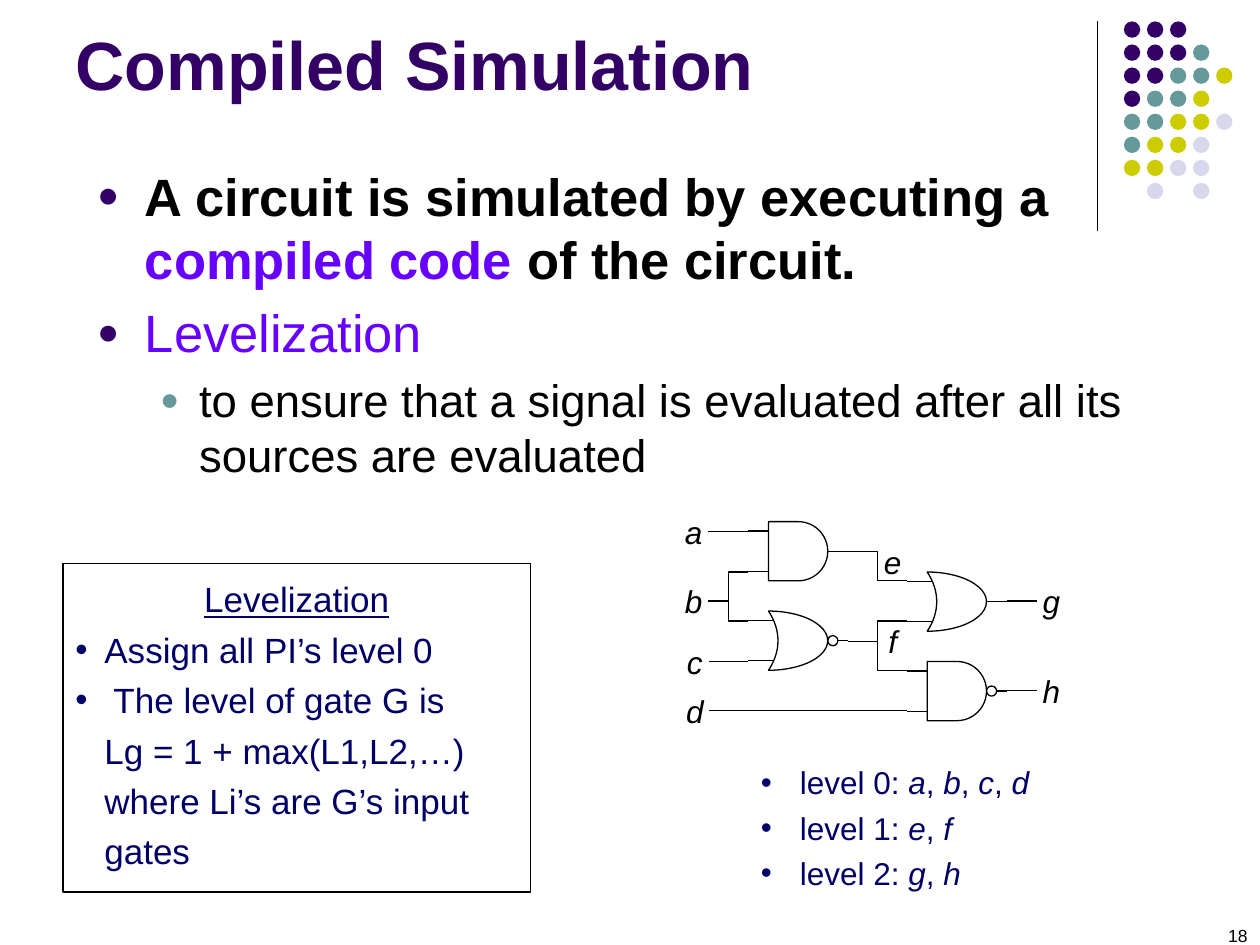
"""Build the Compiled Simulation slide with its gate circuit and levelization rules."""
from dataclasses import dataclass

import pptx
import pptx.dml.color
import pptx.enum.shapes
import pptx.enum.text
import pptx.oxml.ns
import pptx.util
from lxml import etree

Inches = pptx.util.Inches
Pt = pptx.util.Pt
Shape = pptx.enum.shapes.MSO_SHAPE
Connector = pptx.enum.shapes.MSO_CONNECTOR
Align = pptx.enum.text.PP_ALIGN
Anchor = pptx.enum.text.MSO_ANCHOR

BLACK, WHITE, PURPLE, VIOLET = "000000", "FFFFFF", "330066", "6600FF"
TEAL, NAVY = "669999", "000066"
DOT_COLORS = {"P": PURPLE, "T": TEAL, "Y": "CCCC00", "L": "D8D8EC"}
DOT_ROWS = ["PPP", "PPPT", "PPTTY", "PTTY", "TTYYL", "TYYL", "YYLL", "-L-L"]
DOT_PITCH = 0.183
GATE_SIZE = 0.47
LINE_SPACING = 1.2


@dataclass(frozen=True)
class Gate:
    left: float
    top: float
    outline: Shape
    inverted: bool = False


@dataclass(frozen=True)
class Label:
    name: str
    left: float
    top: float


@dataclass(frozen=True)
class Wire:
    begin: tuple[float, float]
    end: tuple[float, float]
    source: str = ""
    target: str = ""


GATES = [
    Gate(7.36, 4.54, Shape.MOON),
    Gate(6.1, 4.14, Shape.FLOWCHART_DELAY),
    Gate(7.36, 5.25, Shape.FLOWCHART_DELAY, inverted=True),
    Gate(6.1, 4.85, Shape.MOON, inverted=True),
]
LABELS = [
    Label("a", 5.39, 4.06), Label("b", 5.39, 4.61), Label("c", 5.4, 5.09), Label("d", 5.4, 5.48),
    Label("e", 6.97, 4.3), Label("f", 6.97, 4.93), Label("g", 8.23, 4.61), Label("h", 8.23, 5.32),
]
WIRES = [
    Wire((5.63, 4.22), (5.94, 4.22), source="a"),
    Wire((5.63, 4.77), (5.94, 4.93), source="b"),
    Wire((5.63, 4.77), (5.94, 4.54), source="b"),
    Wire((5.63, 5.25), (5.94, 5.25), source="c"),
    Wire((5.63, 5.64), (7.2, 5.64), source="d"),
    Wire((6.73, 4.38), (7.2, 4.61)),
    Wire((6.73, 5.09), (7.2, 4.93)),
    Wire((6.73, 5.09), (7.2, 5.32)),
    Wire((7.99, 4.77), (8.23, 4.77), target="g"),
    Wire((7.99, 5.48), (8.23, 5.48), target="h"),
]
RULES = ["Assign all PI’s level 0", " The level of gate G is"]
RULE_LINES = ["Lg = 1 + max(L1,L2,…)", "where Li’s are G’s input", "gates"]
LEVELS = ["abcd", "ef", "gh"]


def rgb(value: str):
    """Turn a hex string into a colour."""
    return pptx.dml.color.RGBColor.from_string(value)


def add_span(para, text: str, *, size: float, color: str = BLACK, bold=False, italic=False, underline=False):
    """Append formatted text to a paragraph."""
    span = para.add_run()
    span.text = text
    font = span.font
    font.name, font.size = "Arial", Pt(size)
    font.bold, font.italic, font.underline = bold, italic, underline
    font.color.rgb = rgb(color)


def next_para(frame):
    """Return the empty first paragraph, or a new one."""
    return frame.add_paragraph() if frame.paragraphs[0].runs else frame.paragraphs[0]


def set_indent(para, left: float, hanging: float = 0.0, bullet: str = "", color: str = "", percent: int = 100):
    """Indent a paragraph and optionally give it a bullet."""
    props = para._p.get_or_add_pPr()
    props.set("marL", str(Inches(left)))
    props.set("indent", str(Inches(-hanging)))
    if bullet:
        qn = pptx.oxml.ns.qn
        if color:
            etree.SubElement(etree.SubElement(props, qn("a:buClr")), qn("a:srgbClr")).set("val", color)
        etree.SubElement(props, qn("a:buSzPct")).set("val", str(percent * 1000))
        etree.SubElement(props, qn("a:buFont")).set("typeface", "Arial")
        etree.SubElement(props, qn("a:buChar")).set("char", bullet)


def add_form(page, kind, left: float, top: float, width: float, height: float, fill: str = "", line: str = ""):
    """Draw a preset shape without a shadow."""
    form = page.shapes.add_shape(kind, Inches(left), Inches(top), Inches(width), Inches(height))
    form.shadow.inherit = False
    if fill:
        form.fill.solid()
        form.fill.fore_color.rgb = rgb(fill)
    else:
        form.fill.background()
    if line:
        form.line.color.rgb = rgb(line)
        form.line.width = Pt(0.75)
    else:
        form.line.fill.background()
    return form


def add_line(page, begin: tuple[float, float], end: tuple[float, float]):
    """Draw a thin black connector, bent when its ends are offset both ways."""
    straight = begin[0] == end[0] or begin[1] == end[1]
    kind = Connector.STRAIGHT if straight else Connector.ELBOW
    line = page.shapes.add_connector(kind, *map(Inches, begin + end))
    line.line.color.rgb = rgb(BLACK)
    line.line.width = Pt(0.75)
    etree.SubElement(line._element.spPr, pptx.oxml.ns.qn("a:effectLst"))
    return line


def add_gate(page, gate: Gate):
    """Draw a logic gate with its input and output stubs."""
    middle = gate.top + GATE_SIZE / 2
    for height in (middle - 0.16, middle + 0.16):
        add_line(page, (gate.left + 0.16, height), (gate.left - 0.16, height))
    add_line(page, (gate.left + 0.63, middle), (gate.left + 0.32, middle))
    form = add_form(page, gate.outline, gate.left, gate.top, GATE_SIZE, GATE_SIZE, WHITE, BLACK)
    if gate.outline == Shape.MOON:
        form.adjustments[0] = 0.84
        form._element.spPr.xfrm.set("flipH", "1")
    if gate.inverted:
        add_form(page, Shape.OVAL, gate.left + GATE_SIZE, middle - 0.04, 0.08, 0.08, WHITE, BLACK)


def add_label(page, label: Label):
    """Write a signal name and return its box."""
    box = add_form(page, Shape.FLOWCHART_PROCESS, label.left, label.top, 0.23, 0.32)
    frame = box.text_frame
    frame.word_wrap, frame.vertical_anchor = False, Anchor.MIDDLE
    para = next_para(frame)
    para.alignment = Align.CENTER
    add_span(para, label.name, size=18, italic=True)
    return box


def add_circuit(page):
    """Draw the gates, signal names and wires."""
    for gate in GATES:
        add_gate(page, gate)
    boxes = {label.name: add_label(page, label) for label in LABELS}
    for wire in WIRES:
        line = add_line(page, wire.begin, wire.end)
        if wire.source:
            line.begin_connect(boxes[wire.source], 3)
        if wire.target:
            line.end_connect(boxes[wire.target], 1)


def add_textbox(page, left: float, top: float, width: float, height: float):
    """Add a wrapping text box and return its frame."""
    frame = page.shapes.add_textbox(Inches(left), Inches(top), Inches(width), Inches(height)).text_frame
    frame.word_wrap = True
    return frame


def place(holder, left: float, top: float, width: float, height: float):
    """Move a placeholder and return its top-anchored frame."""
    holder.left, holder.top, holder.width, holder.height = map(Inches, (left, top, width, height))
    frame = holder.text_frame
    frame.auto_size, frame.vertical_anchor = pptx.enum.text.MSO_AUTO_SIZE.NONE, Anchor.TOP
    return frame


def add_decoration(page):
    """Draw the corner rule, dot pattern and page number."""
    add_line(page, (8.71, 0.17), (8.71, 1.83))
    for row, marks in enumerate(DOT_ROWS):
        for column, mark in enumerate(marks):
            if mark in DOT_COLORS:
                add_form(page, Shape.OVAL, 8.92 + column * DOT_PITCH, 0.17 + row * DOT_PITCH,
                         0.13, 0.13, DOT_COLORS[mark])
    para = next_para(add_textbox(page, 7.67, 7.29, 2.33, 0.21))
    para.alignment = Align.RIGHT
    add_span(para, "18", size=10)


def add_main_text(page):
    """Fill the title and body placeholders."""
    para = next_para(place(page.shapes.title, 0.5, 0.13, 8.25, 1.42))
    para.alignment = Align.LEFT
    add_span(para, "Compiled Simulation", size=39, color=PURPLE, bold=True)
    frame = place(page.placeholders[1], 0.67, 1.25, 8.5, 4.78)
    para = next_para(frame)
    set_indent(para, 0.38, 0.38, "●", PURPLE, 70)
    add_span(para, "A circuit is simulated by executing a ", size=30, bold=True)
    add_span(para, "compiled code", size=30, color=VIOLET, bold=True)
    add_span(para, " of the circuit.", size=30, bold=True)
    para = next_para(frame)
    set_indent(para, 0.38, 0.38, "●", PURPLE, 70)
    add_span(para, "Levelization", size=30, color=VIOLET)
    para = next_para(frame)
    para.level = 1
    set_indent(para, 0.81, 0.31, "●", TEAL, 70)
    add_span(para, "to ensure that a signal is evaluated after all its sources are evaluated", size=26)


def add_rules(page):
    """Write the boxed levelization rules."""
    frame = add_form(page, Shape.RECTANGLE, 0.5, 4.47, 3.71, 2.61, line=BLACK).text_frame
    frame.word_wrap, frame.vertical_anchor = True, Anchor.TOP
    para = next_para(frame)
    para.alignment, para.line_spacing = Align.CENTER, LINE_SPACING
    add_span(para, "Levelization", size=20, color=NAVY, underline=True)
    for text in RULES + RULE_LINES:
        para = next_para(frame)
        para.alignment, para.line_spacing = Align.LEFT, LINE_SPACING
        if text in RULES:
            set_indent(para, 0.23, 0.23, "•")
        else:
            set_indent(para, 0.23)
        add_span(para, text, size=20, color=NAVY)


def add_levels(page):
    """List the signals on each level."""
    frame = add_textbox(page, 5.94, 5.95, 2.44, 1.18)
    for level, signals in enumerate(LEVELS):
        para = next_para(frame)
        para.line_spacing = LINE_SPACING
        set_indent(para, 0.24, 0.24, "•")
        for index, signal in enumerate(signals):
            add_span(para, ", " if index else f" level {level}: ", size=18, color=NAVY)
            add_span(para, signal, size=18, color=NAVY, italic=True)


def main():
    """Build and save the deck."""
    deck = pptx.Presentation()
    deck.slide_width, deck.slide_height = Inches(10), Inches(7.5)
    page = deck.slides.add_slide(deck.slide_layouts[1])
    add_decoration(page)
    add_main_text(page)
    add_circuit(page)
    add_rules(page)
    add_levels(page)
    deck.save("out.pptx")


if __name__ == "__main__":
    main()
